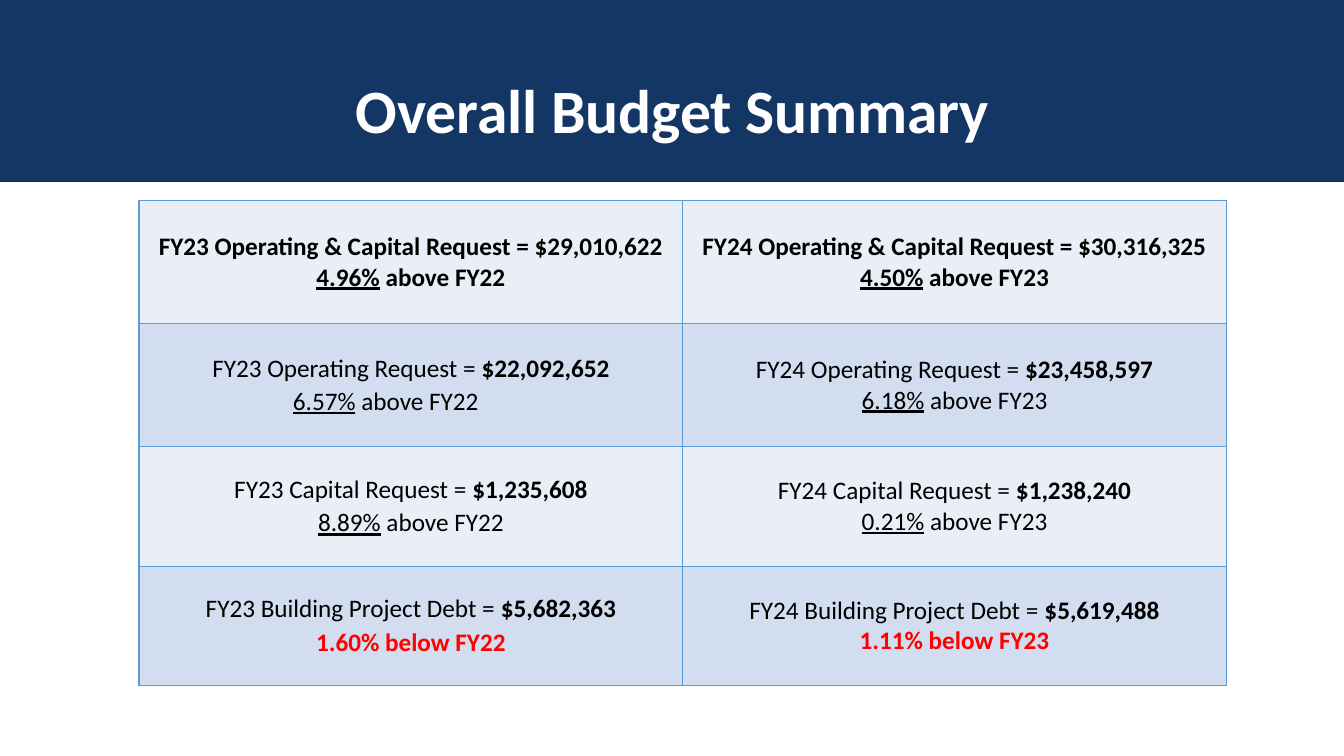
from lxml import etree
from pptx import Presentation, util as u
from pptx.dml.color import RGBColor
from pptx.enum import shapes, text
from pptx.oxml.ns import qn

NAVY = RGBColor(0x14, 0x36, 0x65)
EDGE = RGBColor(0x0F, 0x28, 0x4B)
WHITE = RGBColor(0xFF, 0xFF, 0xFF)
BLACK = RGBColor(0x00, 0x00, 0x00)
RED = RGBColor(0xFF, 0x00, 0x00)
LINE = RGBColor(0x5B, 0x9B, 0xD5)
BANDS = [RGBColor(0xEA, 0xEF, 0xF7), RGBColor(0xD2, 0xDE, 0xEF)]

HEAD = {"size": u.Pt(44), "bold": True, "color": WHITE}
BODY = {"size": u.Pt(18), "bold": False, "color": BLACK}
BOLD = {**BODY, "bold": True}
UNDER = {**BODY, "underline": True}
STRONG = {**BOLD, "underline": True}
BELOW = {**BOLD, "color": RED}


class Deck:
    """Lengths are given on a grid of 100 columns by 100 rows."""
    face = "Calibri"

    def __init__(self, wide, high):
        self.prs = Presentation()
        self.prs.slide_width = u.Inches(wide)
        self.prs.slide_height = u.Inches(high)
        self.slide = self.prs.slides.add_slide(self.prs.slide_layouts[5])

    def cols(self, n):
        return round(self.prs.slide_width * n / 100)

    def rows(self, n):
        return round(self.prs.slide_height * n / 100)

    def box(self, x, y, w, h):
        return self.cols(x), self.rows(y), self.cols(w), self.rows(h)

    def label(self, para, runs):
        para.alignment = text.PP_ALIGN.CENTER
        for words, look in runs:
            run = para.add_run()
            run.text = words
            run.font.name = self.face
            for key, value in look.items():
                if key == "color":
                    run.font.color.rgb = value
                else:
                    setattr(run.font, key, value)

    def band(self, *spot):
        bar = self.slide.shapes.add_shape(
            shapes.MSO_SHAPE.RECTANGLE, *self.box(*spot))
        bar.shadow.inherit = False
        bar.fill.solid()
        bar.fill.fore_color.rgb = NAVY
        bar.line.color.rgb = EDGE
        bar.line.width = u.Pt(1)
        # Keep the band behind the title
        tree = self.slide.shapes._spTree
        tree.remove(bar._element)
        tree.insert(2, bar._element)

    def title(self, words, *spot):
        shape = self.slide.shapes.title
        shape.left, shape.top, shape.width, shape.height = self.box(*spot)
        frame = shape.text_frame
        frame.vertical_anchor = text.MSO_ANCHOR.MIDDLE
        para = frame.paragraphs[0]
        para.line_spacing = 0.9
        self.label(para, [(words, HEAD)])
        para.runs[0].font._element.set("spc", "-10")

    def border(self, cell):
        props = cell._tc.get_or_add_tcPr()
        for spot, side in enumerate(("lnL", "lnR", "lnT", "lnB")):
            line = etree.Element(qn("a:" + side), w=str(u.Pt(1)))
            fill = etree.SubElement(line, qn("a:solidFill"))
            etree.SubElement(fill, qn("a:srgbClr"), val=str(LINE))
            props.insert(spot, line)

    def table(self, data, x, y, width, highs):
        count = len(data[0])
        spot = self.box(x, y, width * count, sum(highs))
        grid = self.slide.shapes.add_table(len(data), count, *spot).table
        grid.first_row = grid.horz_banding = False
        for col in grid.columns:
            col.width = self.cols(width)
        for r, (line, high) in enumerate(zip(data, highs)):
            grid.rows[r].height = self.rows(high)
            for c, (top, low, gap, right) in enumerate(line):
                cell = grid.cell(r, c)
                cell.fill.solid()
                cell.fill.fore_color.rgb = BANDS[r % 2]
                cell.vertical_anchor = text.MSO_ANCHOR.MIDDLE
                self.border(cell)
                frame = cell.text_frame
                self.label(frame.paragraphs[0], top)
                para = frame.add_paragraph()
                para.space_before = u.Pt(gap)
                if right:
                    para._p.get_or_add_pPr().set("marR", str(self.cols(right)))
                self.label(para, low)


# Budget lines: label, then (amount, change) for each year
YEARS = [23, 24]
BUDGET = [
    ("Operating & Capital Request",
     [("$29,010,622", "4.96%"), ("$30,316,325", "4.50%")]),
    ("Operating Request",
     [("$22,092,652", "6.57%"), ("$23,458,597", "6.18%")]),
    ("Capital Request",
     [("$1,235,608", "8.89%"), ("$1,238,240", "0.21%")]),
    ("Building Project Debt",
     [("$5,682,363", "1.60%"), ("$5,619,488", "1.11%")]),
]


def entry(row, col):
    name, pairs = BUDGET[row]
    amount, change = pairs[col]
    year = YEARS[col]
    total, debt = row == 0, row == len(BUDGET) - 1
    top = [(f"FY{year} {name} = ", BOLD if total else BODY), (amount, BOLD)]
    if debt:
        low = [(f"{change} below FY{year - 1}", BELOW)]
    else:
        low = [(change, STRONG if total else UNDER),
               (f" above FY{year - 1}", BOLD if total else BODY)]
    gap = 1.8 if col == 0 and not total else 0
    right = 3.75 if (row, col) == (1, 0) else 0
    return top, low, gap, right


def main():
    deck = Deck(13.33, 7.5)
    # Header
    deck.band(-1.05, -1.6, 101.95, 25.6)
    deck.title("Overall Budget Summary", 6.9, 5.33, 86.27, 19.33)
    # Budget table
    data = [[entry(r, c) for c in range(len(YEARS))]
            for r in range(len(BUDGET))]
    deck.table(data, 10.35, 26.53, 40.45, [16.27, 16.27, 15.87, 15.73])
    deck.prs.save("out.pptx")


if __name__ == "__main__":
    main()
